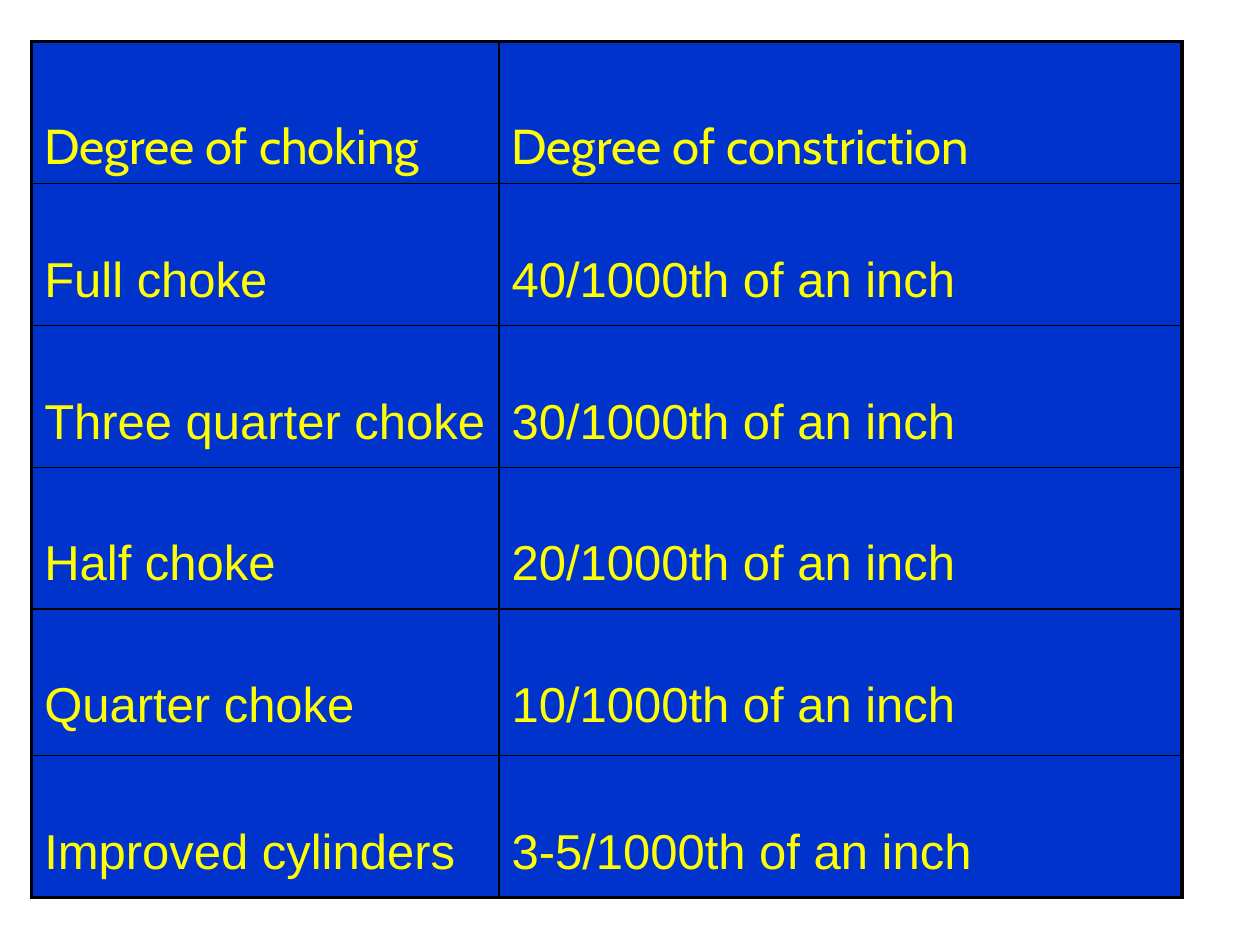
from pptx import Presentation
from pptx.dml.color import RGBColor
from pptx.oxml import parse_xml
from pptx.oxml.ns import nsdecls
from pptx.util import Cm, Pt

ROWS = [
    ("Degree of choking", "Degree of constriction"),
    ("Full choke", "40/1000th of an inch"),
    ("Three quarter choke", "30/1000th of an inch"),
    ("Half choke", "20/1000th of an inch"),
    ("Quarter choke", "10/1000th of an inch"),
    ("Improved cylinders", "3-5/1000th of an inch"),
]
COL_WIDTHS = [9.42, 13.77]
ROW_HEIGHTS = [2.86, 2.86, 2.86, 2.86, 2.95, 2.86]
LEFT, TOP = 0.64, 0.84
COLORS = {"fill": "0033CC", "text": "FFFF00", "border": "000000"}
OUTER, INNER = 2.25, 1


def set_borders(cell, widths):
    """Put lines of the given point widths ahead of the cell's fill."""
    tc_pr = cell._tc.get_or_add_tcPr()
    for i, (side, width) in enumerate(widths.items()):
        tc_pr.insert(i, parse_xml(
            f'<a:ln{side} {nsdecls("a")} w="{Pt(width)}"><a:solidFill>'
            f'<a:srgbClr val="{COLORS["border"]}"/></a:solidFill></a:ln{side}>'))


prs = Presentation()
prs.slide_width, prs.slide_height = Cm(25.4), Cm(19.05)
s = prs.slides.add_slide(prs.slide_layouts[6])
table = s.shapes.add_table(
    len(ROWS), len(COL_WIDTHS), Cm(LEFT), Cm(TOP),
    Cm(sum(COL_WIDTHS)), Cm(sum(ROW_HEIGHTS))).table
table.horz_banding = False

for column, width in zip(table.columns, COL_WIDTHS):
    column.width = Cm(width)
for row, height in zip(table.rows, ROW_HEIGHTS):
    row.height = Cm(height)

last_row, last_col = len(ROWS) - 1, len(COL_WIDTHS) - 1
for i, texts in enumerate(ROWS):
    for j, text in enumerate(texts):
        cell = table.cell(i, j)
        cell.fill.solid()
        cell.fill.fore_color.rgb = RGBColor.from_string(COLORS["fill"])
        set_borders(cell, {
            "L": OUTER if j == 0 else INNER,
            "R": OUTER if j == last_col else INNER,
            "T": OUTER if i == 0 else INNER,
            "B": OUTER if i == last_row else INNER,
        })
        cell.margin_top = Cm(1.52 if i == 0 else 1.4)
        p = cell.text_frame.paragraphs[0]
        p.text = text
        p.font.name = "Cabin" if i == 0 else "Arial"
        p.font.size = Pt(28)
        p.font.bold = False
        p.font.color.rgb = RGBColor.from_string(COLORS["text"])

prs.save("out.pptx")
